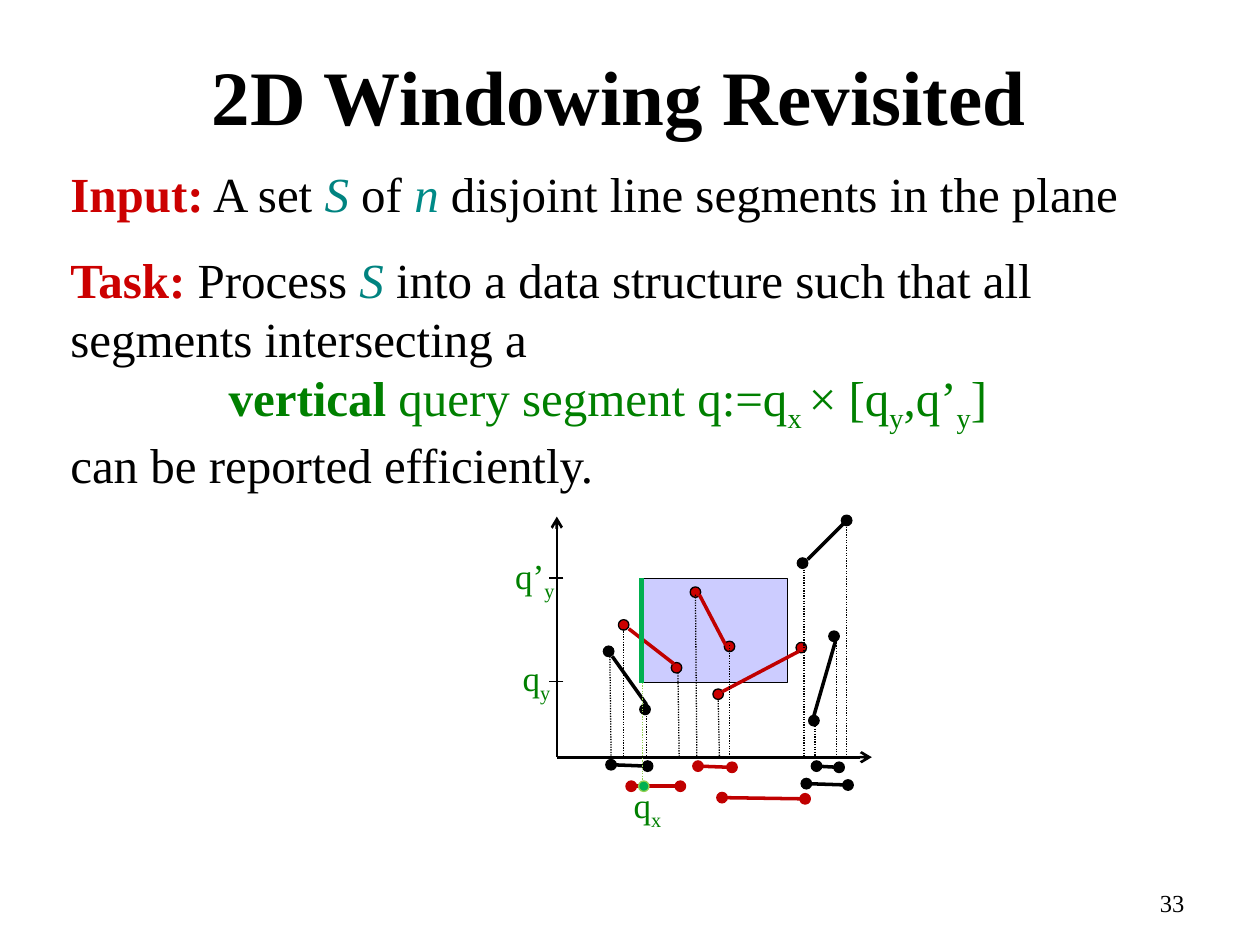
"""Builds the slide on 2D windowing with a vertical query segment."""
from pptx import Presentation, util as u
from pptx.dml.color import RGBColor
from pptx.enum import dml, shapes, text
from pptx.oxml.ns import qn
from lxml import etree

BLACK, RED, DARK_RED, TEAL, GREEN = "000000", "CC0000", "C00000", "008380", "008000"
QUERY, GUIDE, WINDOW = "00B050", "92D050", "CCCCFF"


def colour(hex_string):
    return RGBColor.from_string(hex_string)


class Board:
    def __init__(self, slide, font="Times New Roman", dot_size=6):
        self.slide, self.font, self.dot_size = slide, font, dot_size

    def text(self, left, top, width, height, paragraphs, size, wrap=False, align="LEFT",
             spacing=None, grow=True):
        frame = self.slide.shapes.add_textbox(
            u.Pt(left), u.Pt(top), u.Pt(width), u.Pt(height)).text_frame
        frame.word_wrap = wrap
        if grow:
            frame.auto_size = text.MSO_AUTO_SIZE.SHAPE_TO_FIT_TEXT
        else:
            frame.vertical_anchor = text.MSO_ANCHOR.MIDDLE
        for index, (indent, runs) in enumerate(paragraphs):
            paragraph = frame.add_paragraph() if index else frame.paragraphs[0]
            paragraph.alignment = getattr(text.PP_ALIGN, align)
            if spacing:
                paragraph.line_spacing = spacing
            if indent:
                properties = paragraph._p.get_or_add_pPr()
                properties.set("marL", str(u.Pt(indent)))
                properties.set("indent", "0")
            for words, ink, style in runs:
                self.run(paragraph, words, ink, style, size)

    def run(self, paragraph, words, ink, style, size):
        run = paragraph.add_run()
        run.text = words
        run.font.name, run.font.size = self.font, u.Pt(size)
        run.font.bold, run.font.italic = style == "bold", style == "italic"
        run.font.color.rgb = colour(ink)
        if style == "sub":
            run.font._element.set("baseline", "-25000")

    def shape(self, kind, left, top, width, height, fill, line):
        shape = self.slide.shapes.add_shape(
            kind, u.Pt(left), u.Pt(top), u.Pt(width), u.Pt(height))
        shape.shadow.inherit = False
        shape.fill.solid()
        shape.fill.fore_color.rgb = colour(fill)
        shape.line.color.rgb = colour(line)
        shape.line.width = u.Pt(0.75)

    def dot(self, x, y, fill, line=BLACK):
        size = self.dot_size
        self.shape(shapes.MSO_SHAPE.OVAL, x - size / 2, y - size / 2, size, size, fill, line)

    def line(self, x1, y1, x2, y2, ink=BLACK, width=2, dotted=False, arrow=False):
        line = self.slide.shapes.add_connector(
            shapes.MSO_CONNECTOR.STRAIGHT, u.Pt(x1), u.Pt(y1), u.Pt(x2), u.Pt(y2))
        line.line.color.rgb = colour(ink)
        line.line.width = u.Pt(width)
        if dotted:
            line.line.dash_style = dml.MSO_LINE.ROUND_DOT
        if arrow:
            etree.SubElement(line.line._get_or_add_ln(), qn("a:tailEnd"), type="arrow")
        etree.SubElement(line._element.spPr, qn("a:effectLst"))


def add_texts(board):
    board.text(653, 504, 31, 23.8, [(0, [("33", BLACK, "")])], 14, align="RIGHT")
    board.text(113.8, 12.2, 594, 90, [(0, [("2D Windowing Revisited", BLACK, "bold")])], 44,
               wrap=True, spacing=0.9, grow=False)
    board.text(33.1, 90, 619.2, 41, [(0, [
        ("Input:", RED, "bold"), (" A set ", BLACK, ""), ("S", TEAL, "italic"),
        (" of ", BLACK, ""), ("n", "008A87", "italic"),
        (" disjoint line segments in the plane", BLACK, "")])], 28)
    board.text(33.1, 139, 627.1, 143.3, [
        (0, [("Task:", RED, "bold"), (" Process ", BLACK, ""), ("S", TEAL, "italic"),
             (" into a data structure such that all segments intersecting a", BLACK, "")]),
        (90.5, [("vertical", GREEN, "bold"), (" query segment q:=q", GREEN, ""),
                ("x ", GREEN, "sub"), ("× [q", GREEN, ""), ("y", GREEN, "sub"),
                (",q’", GREEN, ""), ("y", GREEN, "sub"), ("]", GREEN, "")]),
        (0, [("can be reported efficiently.", BLACK, "")])], 28, wrap=True)


def add_plot(board):
    axis_x, axis_y = 318.2, 432.7
    window_left, window_top, window_bottom = 365.8, 330.5, 390.2
    black_segments = [
        ((347.8, 372.2), (368.6, 405.4), (349.9, 375.1, 369.4, 402.5)),
        ((483.8, 297.4), (458.6, 321.8), (481.7, 299.5, 461.5, 319.7)),
        ((476.6, 363.6), (465.1, 411.8), (477.4, 366.5, 465.1, 409))]
    red_segments = [
        ((416.9, 369.4), (397.4, 338.4), (414.7, 368.6, 399.6, 339.8)),
        ((386.6, 381.6), (356.4, 357.1), (385.2, 379.4, 359.3, 359.3)),
        ((410.4, 396.7), (457.9, 370.1), (412.6, 395.3, 456.5, 372.2))]
    projections = [
        (349.2, 437, 370.1, 437.8, BLACK), (360.7, 449.3, 388.8, 449.3, DARK_RED),
        (466.6, 437.8, 479.5, 438.5, BLACK), (398.9, 437.8, 418.3, 438.5, DARK_RED),
        (412.6, 455.8, 460.1, 456.5, DARK_RED), (460.8, 447.8, 484.6, 448.6, BLACK)]
    drops = [
        (348.5, 375.1, 349.2), (369.4, 403.2, 369.4), (387.4, 384.5, 388.1),
        (410.4, 400.3, 411.1), (356.4, 359.3, 356.4), (397.4, 339.8, 398.2),
        (416.9, 368.6, 416.9), (459.4, 324, 459.4), (465.8, 410.4, 465.8),
        (478.1, 362.9, 478.1), (483.8, 301, 483.8)]

    board.line(axis_x, axis_y, axis_x, 295.2, width=1.5, arrow=True)
    board.line(axis_x, axis_y, 498.2, axis_y, width=1.5, arrow=True)
    board.shape(shapes.MSO_SHAPE.RECTANGLE, window_left, window_top, 84.2,
                window_bottom - window_top, WINDOW, BLACK)
    for segments, fill, ink in ((black_segments, BLACK, BLACK), (red_segments, RED, DARK_RED)):
        for start, end, stroke in segments:
            board.dot(*start, fill)
            board.dot(*end, fill)
            board.line(*stroke, ink)
    board.line(366.5, window_top, 366.5, window_bottom, QUERY, 3.25)
    for x, top, foot in drops:
        board.line(x, top, foot, 432, width=0.75, dotted=True)
    for x1, y1, x2, y2, ink in projections:
        board.line(x1, y1, x2, y2, ink)
        board.dot(x1, y1, ink, ink)
        board.dot(x2, y2, ink, ink)
    board.line(367.2, window_bottom, 367.2, 450.7, GUIDE, 0.75, dotted=True)
    board.dot(367.9, 449.3, QUERY, GUIDE)
    for tick_y in (389.5, window_top):
        board.line(axis_x + 3.8, tick_y, axis_x - 4.2, tick_y, width=1)
    for left, top, width, name, index in ((355, 444.2, 31.7, "q", "x"),
                                          (291.6, 371.5, 31.7, "q", "y"),
                                          (287.3, 313.2, 38.2, "q’", "y")):
        board.text(left, top, width, 31.7,
                   [(0, [(name, GREEN, ""), (index, GREEN, "sub")])], 20)


def main():
    deck = Presentation()
    deck.slide_width, deck.slide_height = u.Pt(720), u.Pt(540)
    board = Board(deck.slides.add_slide(deck.slide_layouts[6]))
    add_texts(board)
    add_plot(board)
    deck.save("out.pptx")


if __name__ == "__main__":
    main()
